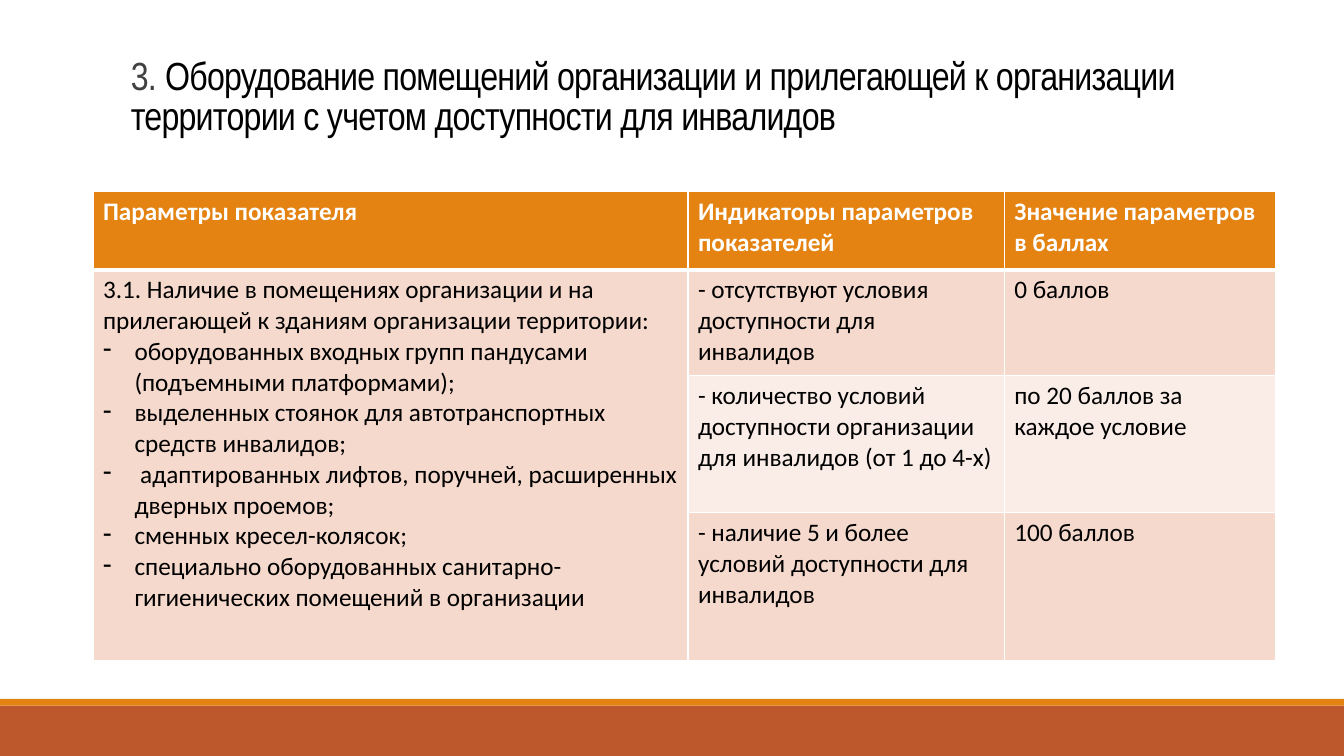
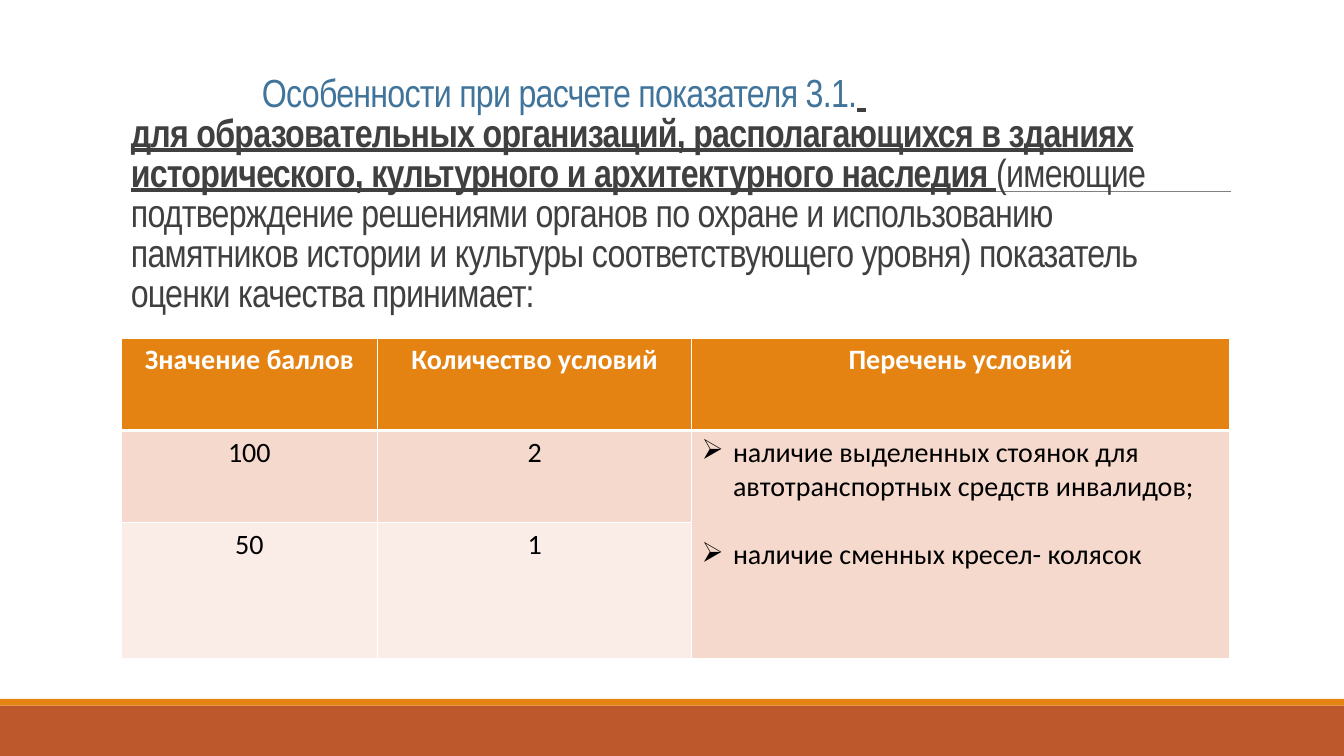
"""Two slides on accessibility indicators: titles with scoring tables."""
import lxml.etree
import pptx
import pptx.dml.color
import pptx.enum.shapes
import pptx.enum.text
import pptx.oxml.ns
import pptx.util

Pt = pptx.util.Pt
qn = pptx.oxml.ns.qn
ALIGN = pptx.enum.text.PP_ALIGN

WIDTH, HEIGHT = 960, 540
ORANGE, RUST, GREY = "E48312", "BD582C", "808080"
WHITE, BLACK, DARK, BLUE = "FFFFFF", "000000", "404040", "40749B"
BANDS = ("FAEDE7", "F5D9CC")
TITLE_FONT, TABLE_FONT = "Arial Narrow", "Calibri"
BULLET_INDENT = 22.5
TITLE_LEFT, TITLE_TOP, TITLE_WIDTH = 86.4, 22.3, 792

SLIDES = [
    {
        "title_height": 80,
        "title": [
            {"indent": 0, "runs": [
                ("3. ", DARK, False),
                ("Оборудование помещений организации и прилегающей к организации "
                 "территории с учетом доступности для инвалидов", BLACK, False),
            ]},
        ],
        "table": {
            "left": 66.4, "top": 136.8, "size": 18, "align": ALIGN.LEFT,
            "columns": [425, 226, 194], "heights": [56, 75.5, 98, 105.5],
            "rows": [
                ["Параметры показателя", "Индикаторы параметров показателей",
                 "Значение параметров в баллах"],
                [{"lead": ["3.1. Наличие в помещениях организации и на прилегающей "
                           "к зданиям организации территории:"],
                  "bullet": "-", "gap": 0,
                  "items": [
                      "оборудованных входных групп пандусами (подъемными платформами);",
                      "выделенных стоянок для автотранспортных средств инвалидов;",
                      " адаптированных лифтов, поручней, расширенных дверных проемов;",
                      "сменных кресел-колясок;",
                      "специально оборудованных санитарно-гигиенических помещений "
                      "в организации",
                  ]},
                 "- отсутствуют условия доступности для инвалидов", "0 баллов"],
                [None, "- количество условий доступности организации для инвалидов "
                       "(от 1 до 4-х)", "по 20 баллов за каждое условие"],
                [None, "- наличие 5 и более условий доступности для инвалидов",
                 "100 баллов"],
            ],
        },
    },
    {
        "title_height": 206.6,
        "title": [
            {"indent": 93.6, "runs": [
                ("Особенности при расчете показателя 3.1.", BLUE, False),
                (" ", DARK, True),
            ]},
            {"indent": 0, "runs": [
                ("для образовательных организаций, располагающихся в зданиях "
                 "исторического, культурного и архитектурного наследия ", DARK, True),
                ("(имеющие подтверждение решениями органов по охране и использованию "
                 "памятников истории и культуры соответствующего уровня) показатель "
                 "оценки качества принимает:", DARK, False),
            ]},
        ],
        "table": {
            "left": 86.4, "top": 241.5, "size": 20, "align": ALIGN.CENTER,
            "columns": [183.5, 224, 384.5], "heights": [66, 66, 97],
            "rows": [
                ["Значение баллов", "Количество условий", "Перечень условий"],
                ["100", "2",
                 {"lead": [], "bullet": "➢", "gap": 24.4,
                  "items": [
                      "наличие выделенных стоянок для автотранспортных средств инвалидов;",
                      "наличие сменных кресел- колясок",
                  ]}],
                ["50", "1", None],
            ],
        },
    },
]


def rgb(color):
    return pptx.dml.color.RGBColor.from_string(color)


def paint(target, color):
    target.fill.solid()
    target.fill.fore_color.rgb = rgb(color)


def add_band(slide, top, height, color):
    band = slide.shapes.add_shape(
        pptx.enum.shapes.MSO_SHAPE.RECTANGLE, Pt(0), Pt(top), Pt(WIDTH), Pt(height))
    band.shadow.inherit = False
    paint(band, color)
    band.line.fill.background()


def add_frame(slide):
    add_band(slide, 504, HEIGHT - 504, RUST)
    add_band(slide, 499.2, 4.8, ORANGE)
    rule = slide.shapes.add_connector(
        pptx.enum.shapes.MSO_CONNECTOR.STRAIGHT,
        Pt(94.3), Pt(136.8), Pt(879), Pt(136.8))
    rule.line.color.rgb = rgb(GREY)
    rule.line.width = Pt(0.5)
    lxml.etree.SubElement(rule._element.spPr, qn("a:effectLst"))


def add_title(slide, lines, height):
    box = slide.shapes.add_textbox(
        Pt(TITLE_LEFT), Pt(TITLE_TOP), Pt(TITLE_WIDTH), Pt(height))
    frame = box.text_frame
    frame.word_wrap = True
    frame.vertical_anchor = pptx.enum.text.MSO_ANCHOR.BOTTOM
    for number, line in enumerate(lines):
        paragraph = frame.add_paragraph() if number else frame.paragraphs[0]
        paragraph.line_spacing = 0.85
        paragraph.font.size = Pt(28)
        paragraph.font.name = TITLE_FONT
        paragraph._p.get_or_add_pPr().set("indent", str(Pt(line["indent"])))
        for text, color, stressed in line["runs"]:
            run = paragraph.add_run()
            run.text = text
            run.font.size = Pt(28)
            run.font.name = TITLE_FONT
            run.font.color.rgb = rgb(color)
            run.font.bold = run.font.underline = stressed
            run.font._element.set("spc", "-50")


def add_bullet(paragraph, mark):
    properties = paragraph._p.get_or_add_pPr()
    properties.set("marL", str(Pt(BULLET_INDENT)))
    properties.set("indent", str(-Pt(BULLET_INDENT)))
    bullet = lxml.etree.Element(qn("a:buChar"), char=mark)
    properties.insert_element_before(bullet, "a:tabLst", "a:defRPr", "a:extLst")


def set_borders(cell, row):
    widths = {"L": 1, "R": 1, "T": 3 if row == 1 else 1, "B": 1 if row else 3}
    properties = cell._tc.get_or_add_tcPr()
    for side, width in widths.items():
        line = lxml.etree.SubElement(properties, qn("a:ln" + side), w=str(Pt(width)))
        fill = lxml.etree.SubElement(line, qn("a:solidFill"))
        lxml.etree.SubElement(fill, qn("a:srgbClr"), val=WHITE)


def write_cell(cell, content, size, align, header):
    listed = isinstance(content, dict)
    lead = content["lead"] if listed else [content]
    items = content["items"] if listed else []
    for number, text in enumerate(lead + items):
        frame = cell.text_frame
        paragraph = frame.add_paragraph() if number else frame.paragraphs[0]
        paragraph.text = text
        paragraph.alignment = ALIGN.LEFT if listed else align
        paragraph.font.size = Pt(size)
        paragraph.font.name = TABLE_FONT
        paragraph.font.bold = header
        paragraph.font.color.rgb = rgb(WHITE if header else BLACK)
        if number >= len(lead):
            paragraph.space_before = Pt(content["gap"] if number else 0)
            add_bullet(paragraph, content["bullet"])


def add_score_table(slide, left, top, size, align, columns, heights, rows):
    table = slide.shapes.add_table(
        len(rows), len(columns), Pt(left), Pt(top),
        Pt(sum(columns)), Pt(sum(heights))).table
    for column, width in zip(table.columns, columns):
        column.width = Pt(width)
    for line, height in zip(table.rows, heights):
        line.height = Pt(height)
    for row, contents in enumerate(rows):
        for column, content in enumerate(contents):
            cell = table.cell(row, column)
            set_borders(cell, row)
            paint(cell, BANDS[row % 2] if row else ORANGE)
            if content is not None:
                write_cell(cell, content, size, align, row == 0)
    for column, contents in enumerate(zip(*rows)):
        if None in contents:
            first = contents.index(None) - 1
            table.cell(first, column).merge(table.cell(len(rows) - 1, column))


def main():
    deck = pptx.Presentation()
    deck.slide_width, deck.slide_height = Pt(WIDTH), Pt(HEIGHT)
    for content in SLIDES:
        slide = deck.slides.add_slide(deck.slide_layouts[6])
        add_frame(slide)
        add_title(slide, content["title"], content["title_height"])
        add_score_table(slide, **content["table"])
    deck.save("out.pptx")


if __name__ == "__main__":
    main()
